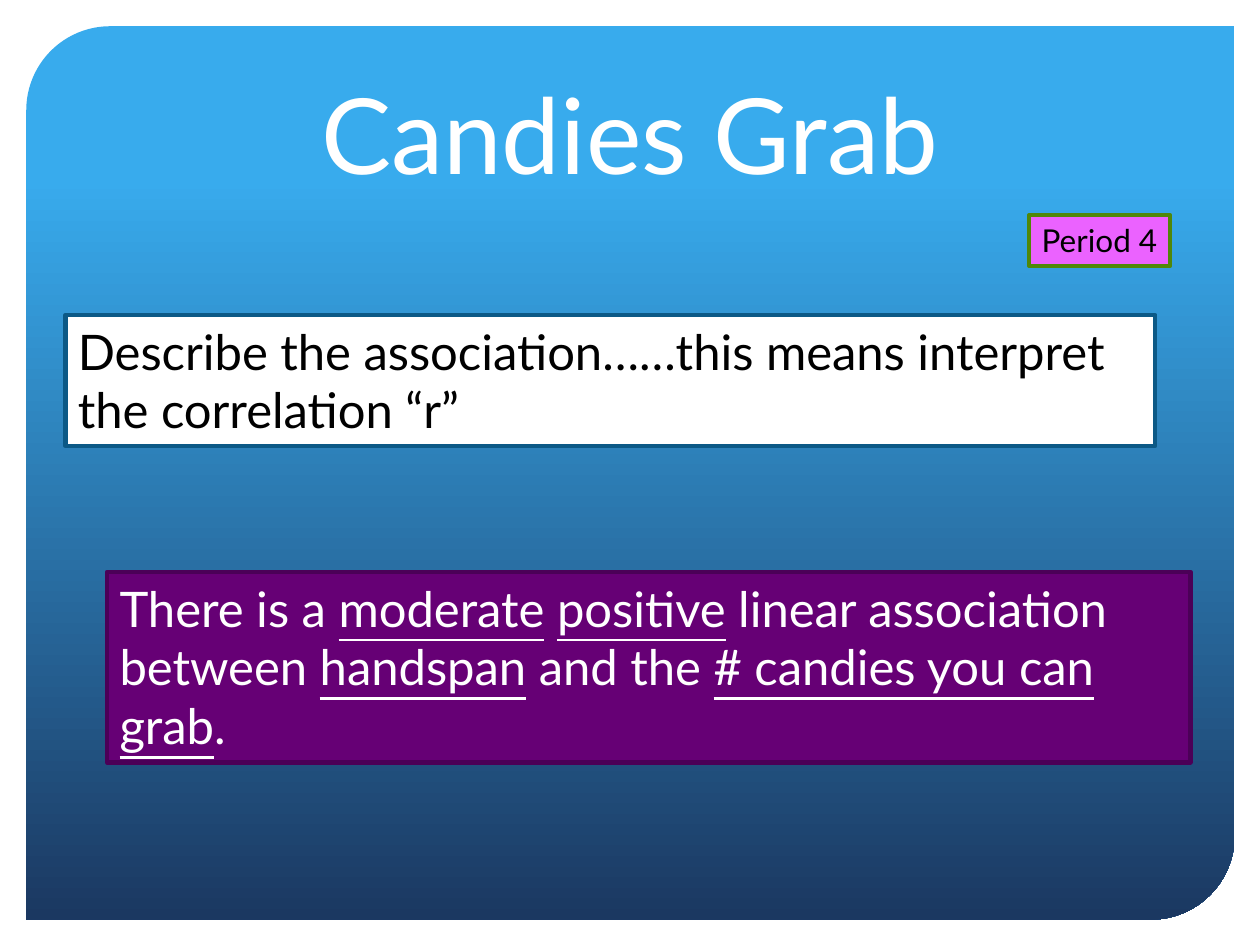
"""Build a slide that interprets the correlation in a candy grab experiment."""
from pptx import Presentation
from pptx.dml.color import RGBColor
from pptx.enum.shapes import MSO_SHAPE
from pptx.enum.text import MSO_ANCHOR, MSO_AUTO_SIZE, PP_ALIGN
from pptx.util import Cm, Pt

RECTANGLE = MSO_SHAPE.RECTANGLE
ROUNDED = MSO_SHAPE.ROUND_2_DIAG_RECTANGLE
TOP, BOTTOM = MSO_ANCHOR.TOP, MSO_ANCHOR.BOTTOM
NO_FIT, GROW = MSO_AUTO_SIZE.NONE, MSO_AUTO_SIZE.SHAPE_TO_FIT_TEXT
LEFT, CENTER = PP_ALIGN.LEFT, PP_ALIGN.CENTER
WHITE, BLACK = "FFFFFF", "000000"


def color(value):
    return RGBColor.from_string(value)


class SlideBuilder:
    def __init__(self, slide, font="Lato"):
        self.slide = slide
        self.font = font

    def style(self, run, size, ink):
        run.font.name = self.font
        run.font.size = Pt(size)
        run.font.color.rgb = color(ink)

    def shape(self, kind, box):
        shape = self.slide.shapes.add_shape(kind, *map(Cm, box))
        shape.shadow.inherit = False
        return shape

    def backdrop(self, box, stops):
        panel = self.shape(ROUNDED, box)
        panel.adjustments[0] = 0.094
        panel.adjustments[1] = 0
        panel.line.fill.background()
        panel.fill.gradient()
        panel.fill.gradient_angle = 270
        for stop, (position, shade) in zip(panel.fill.gradient_stops, stops):
            stop.position = position
            stop.color.rgb = color(shade)

    def title(self, text, box, size=60):
        heading = self.slide.shapes.title
        heading._element.getparent().append(heading._element)
        heading.left, heading.top, heading.width, heading.height = map(Cm, box)
        frame = heading.text_frame
        frame.text = text
        frame.word_wrap = True
        frame.auto_size = NO_FIT
        frame.vertical_anchor = BOTTOM
        frame.paragraphs[0].alignment = CENTER
        self.style(frame.paragraphs[0].runs[0], size, WHITE)

    def panel(self, parts, box, fill, border, ink, size=28, wrap=True):
        panel = self.shape(RECTANGLE, box)
        panel.fill.solid()
        panel.fill.fore_color.rgb = color(fill)
        panel.line.color.rgb = color(border)
        panel.line.width = Pt(2.5)
        frame = panel.text_frame
        frame.word_wrap = wrap
        frame.auto_size = GROW
        frame.vertical_anchor = TOP
        sentence = frame.paragraphs[0]
        sentence.alignment = LEFT
        for text, underlined in parts:
            run = sentence.add_run()
            run.text = text
            self.style(run, size, ink)
            run.font.underline = underlined


def main():
    deck = Presentation()
    deck.slide_width, deck.slide_height = Cm(25.4), Cm(19.05)
    builder = SlideBuilder(deck.slides.add_slide(deck.slide_layouts[5]))

    builder.backdrop((0.53, 0.53, 24.36, 18.01),
                     [(0.17, "38ABED"), (1, "1B3861")])
    answer = [
        ("There is a ", False), ("moderate", True), (" ", False),
        ("positive", True), (" linear association between ", False),
        ("handspan", True), (" and the ", False),
        ("# candies you can grab", True), (".", False),
    ]
    builder.panel(answer, (2.16, 11.53, 21.84, 3.84), "660075", "4B0057", WHITE)
    question = "Describe the association……this means interpret the correlation “r”"
    builder.panel([(question, False)], (1.32, 6.35, 21.97, 2.64),
                  WHITE, "0C5986", BLACK)
    builder.title("Candies Grab", (2.16, 1.17, 21.06, 2.9))
    builder.panel([("Period 4", False)], (20.75, 4.34, 2.84, 1.02),
                  "EB62FF", "508709", BLACK, size=18, wrap=False)

    deck.save("out.pptx")


if __name__ == "__main__":
    main()
